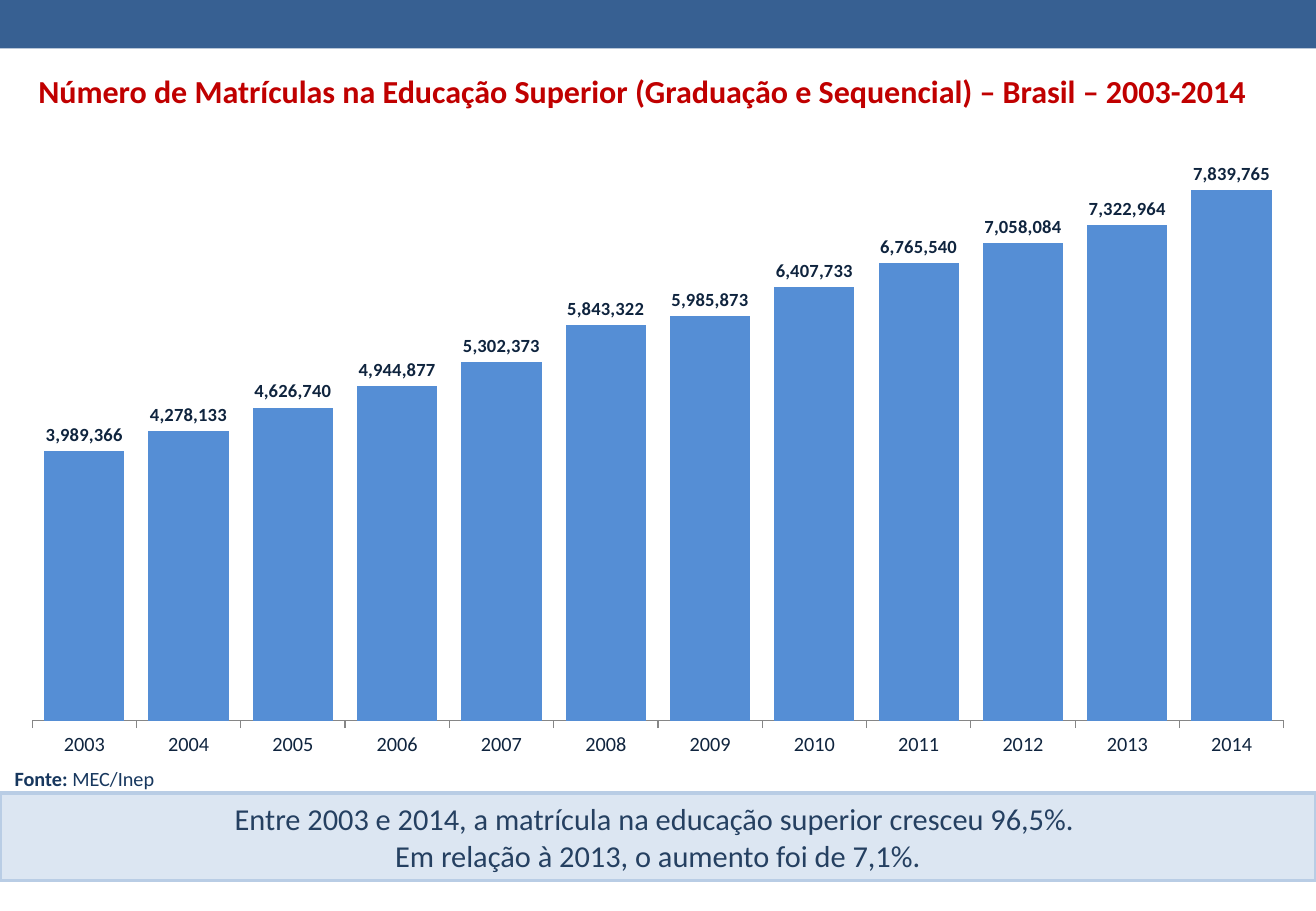
from lxml import etree
from pptx import Presentation
from pptx.chart.data import CategoryChartData
from pptx.dml.color import RGBColor
from pptx.enum.chart import XL_CHART_TYPE, XL_LABEL_POSITION, XL_TICK_MARK
from pptx.enum.shapes import MSO_SHAPE
from pptx.enum.text import MSO_ANCHOR, PP_ALIGN
from pptx.oxml.ns import qn
from pptx.util import Inches, Pt

TITLE = "Número de Matrículas na Educação Superior (Graduação e Sequencial) – Brasil – 2003-2014"
FIRST_YEAR = 2003
ENROLMENTS = [
    3989366, 4278133, 4626740, 4944877, 5302373, 5843322,
    5985873, 6407733, 6765540, 7058084, 7322964, 7839765,
]
SOURCE = ("Fonte: ", "MEC/Inep")
FINDINGS = [
    "Entre 2003 e 2014, a matrícula na educação superior cresceu 96,5%. ",
    "Em relação à 2013, o aumento foi de 7,1%.",
]

FONT = "Calibri"
COLORS = {
    "banner": "376092", "title": "C00000", "bar": "558ED5", "label": "0F243E",
    "axis": "868686", "source": "17375E", "panel": "DCE6F2",
    "panel_line": "B9CDE5", "finding": "254061",
}
WIDTH, HEIGHT = 10.83, 7.5
PLOT_AREA = {"x": 0.02, "y": 0.027, "w": 0.96, "h": 0.892}  # shares of the chart
CENTER = PP_ALIGN.CENTER
MIDDLE = MSO_ANCHOR.MIDDLE


def color(name):
    return RGBColor.from_string(COLORS[name])


def style_font(font, size, color_name, bold=False):
    font.name = FONT
    font.size = Pt(size)
    font.bold = bold
    font.color.rgb = color(color_name)


def set_margins(target, left, top, right, bottom):
    target.margin_left, target.margin_right = Inches(left), Inches(right)
    target.margin_top, target.margin_bottom = Inches(top), Inches(bottom)


def add_rectangle(slide, top, height, fill_name):
    """Add a full-width rectangle without outline."""
    shape = slide.shapes.add_shape(
        MSO_SHAPE.RECTANGLE, 0, Inches(top), Inches(WIDTH), Inches(height))
    shape.shadow.inherit = False
    shape.fill.solid()
    shape.fill.fore_color.rgb = color(fill_name)
    shape.line.fill.background()
    return shape


def fix_plot_area(chart):
    """Pin the inner plot area to PLOT_AREA."""
    plot_area = chart._chartSpace.chart.plotArea
    for old_layout in plot_area.findall(qn("c:layout")):
        plot_area.remove(old_layout)
    layout = etree.Element(qn("c:layout"))
    manual = etree.SubElement(layout, qn("c:manualLayout"))
    settings = [("layoutTarget", "inner"), ("xMode", "edge"), ("yMode", "edge")]
    for tag, value in settings + list(PLOT_AREA.items()):
        etree.SubElement(manual, qn("c:" + tag)).set("val", str(value))
    plot_area.insert(0, layout)


def add_enrolment_chart(slide):
    data = CategoryChartData(number_format="#,##0")
    data.categories = [str(FIRST_YEAR + i) for i in range(len(ENROLMENTS))]
    data.add_series("Matrículas", ENROLMENTS)
    chart = slide.shapes.add_chart(
        XL_CHART_TYPE.COLUMN_CLUSTERED, Inches(0.05), Inches(1.34),
        Inches(10.73), Inches(5), data).chart
    chart.has_legend = False
    chart.has_title = False
    chart.font.name = FONT
    chart.font.size = Pt(10)
    fix_plot_area(chart)

    years = chart.category_axis
    years.major_tick_mark = XL_TICK_MARK.OUTSIDE
    years.format.line.color.rgb = color("axis")
    style_font(years.tick_labels.font, 12, "label")
    values = chart.value_axis
    values.minimum_scale, values.maximum_scale = 0, 8000000
    values.has_major_gridlines = False
    values.visible = False

    plot = chart.plots[0]
    plot.gap_width = 30
    plot.vary_by_categories = False
    fill = plot.series[0].format.fill
    fill.solid()
    fill.fore_color.rgb = color("bar")
    plot.has_data_labels = True
    labels = plot.data_labels
    labels.show_value = True
    labels.number_format, labels.number_format_is_linked = "#,##0", False
    labels.position = XL_LABEL_POSITION.OUTSIDE_END
    style_font(labels.font, 11, "label", bold=True)


def add_findings(slide):
    panel = add_rectangle(slide, 6.53, 0.72, "panel")
    panel.line.color.rgb = color("panel_line")
    panel.line.width = Pt(2)
    frame = panel.text_frame
    frame.word_wrap = True
    frame.vertical_anchor = MIDDLE
    set_margins(frame, 0.12, 0.06, 0.12, 0.06)
    for i, finding in enumerate(FINDINGS):
        paragraph = frame.add_paragraph() if i else frame.paragraphs[0]
        paragraph.text = finding
        paragraph.alignment = CENTER
        style_font(paragraph.font, 18, "finding")


def add_title(slide):
    table = slide.shapes.add_table(
        1, 1, Inches(-0.13), Inches(0.5), Inches(WIDTH), Inches(0.52)).table
    table.first_row = table.horz_banding = False
    cell = table.cell(0, 0)
    cell.fill.background()
    cell.vertical_anchor = MIDDLE
    set_margins(cell, 0.01, 0.01, 0.01, 0)
    borders = cell._tc.get_or_add_tcPr()
    for i, side in enumerate(("lnL", "lnR", "lnT", "lnB")):
        border = etree.Element(qn("a:" + side), w="0")
        etree.SubElement(border, qn("a:noFill"))
        borders.insert(i, border)
    paragraph = cell.text_frame.paragraphs[0]
    paragraph.text = TITLE
    paragraph.alignment = CENTER
    style_font(paragraph.font, 19, "title", bold=True)


def add_source(slide):
    frame = slide.shapes.add_textbox(
        0, Inches(6.25), Inches(1.4), Inches(0.32)).text_frame
    frame.word_wrap = False
    set_margins(frame, 0.12, 0.06, 0.12, 0.06)
    for i, text in enumerate(SOURCE):
        run = frame.paragraphs[0].add_run()
        run.text = text
        style_font(run.font, 12, "source", bold=i == 0)


def main():
    presentation = Presentation()
    presentation.slide_width = Inches(WIDTH)
    presentation.slide_height = Inches(HEIGHT)
    slide = presentation.slides.add_slide(presentation.slide_layouts[6])
    add_rectangle(slide, 0, 0.4, "banner")
    add_enrolment_chart(slide)
    add_findings(slide)
    add_title(slide)
    add_source(slide)
    presentation.save("out.pptx")


if __name__ == "__main__":
    main()
